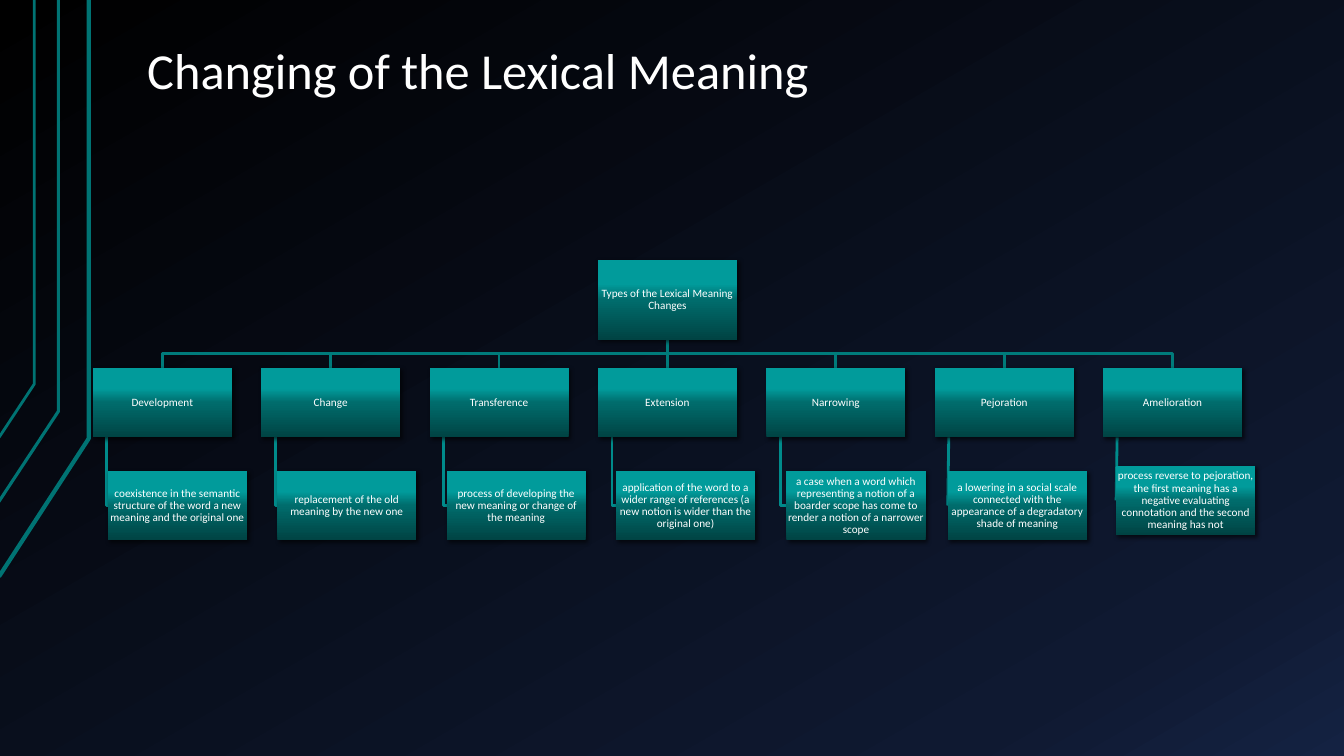
from lxml.etree import SubElement
from pptx import Presentation
from pptx.dml.color import RGBColor
from pptx.enum.shapes import MSO_CONNECTOR, MSO_SHAPE
from pptx.enum.text import MSO_ANCHOR, MSO_AUTO_SIZE, PP_ALIGN
from pptx.oxml.ns import qn
from pptx.util import Inches, Pt

WHITE = RGBColor(0xFF, 0xFF, 0xFF)
BLACK = RGBColor(0x00, 0x00, 0x00)
RAIL = RGBColor(0x00, 0x73, 0x73)
TRUNK = RGBColor(0x00, 0x7B, 0x7B)
BRANCH = RGBColor(0x00, 0x8B, 0x8B)

BACKDROP = [(0, BLACK), (85, RGBColor(0x0F, 0x19, 0x31)),
            (100, RGBColor(0x14, 0x22, 0x42))]
TEAL = [(0, RGBColor(0x00, 0x43, 0x43)), (50, RGBColor(0x00, 0x6C, 0x6C)),
        (70, RGBColor(0x01, 0x9B, 0x9B)), (100, RGBColor(0x00, 0x99, 0x99))]

# Outline of each decorative rail and its width in points
RAILS = [
    ([(-0.01, 5.72), (0.88, 4.35), (0.88, 0)], 3),
    ([(-0.02, 4.99), (0.58, 4.08), (0.58, 0)], 2.25),
    ([(-0.01, 4.34), (0.34, 3.81), (0.34, 0)], 2),
]

# Type of change, its explanation, left and top of the explanation
CHANGES = [
    ("Development", "coexistence in the semantic structure of the word a new "
     "meaning and the original one", 1.07, 4.67),
    ("Change", "replacement of the old meaning by the new one", 2.75, 4.67),
    ("Transference", "process of developing the new meaning or change of the "
     "meaning", 4.43, 4.67),
    ("Extension", "application of the word to a wider range of references "
     "(a new notion is wider than the original one)", 6.11, 4.67),
    ("Narrowing", "a case when a word which representing a notion of a boarder "
     "scope has come to render a notion of a narrower scope", 7.8, 4.67),
    ("Pejoration", "a lowering in a social scale connected with the "
     "appearance of a degradatory shade of meaning", 9.4, 4.67),
    ("Amelioration", "process reverse to pejoration, the first meaning has a "
     "negative evaluating connotation and the second meaning has not",
     11.07, 4.62),
]

BOX_W, BOX_H = 1.38, 0.69
ROOT_LEFT, ROOT_TOP, ROOT_H = 5.93, 2.58, 0.79
TYPE_LEFT, TYPE_TOP, TYPE_STEP = 0.92, 3.65, 1.67
BUS_Y = 3.51
STEM_INSET = 0.14


def set_gradient(fill, element, stops, angle):
    fill.gradient()
    fill.gradient_angle = angle
    stop_list = next(element.iter(qn("a:gsLst")))
    for old_stop in list(stop_list):
        stop_list.remove(old_stop)
    for position, color in stops:
        stop = SubElement(stop_list, qn("a:gs"), pos=str(position * 1000))
        SubElement(stop, qn("a:srgbClr"), val=str(color))


def set_text(shape, text, size, inset_x, inset_y, anchor=MSO_ANCHOR.MIDDLE,
             align=PP_ALIGN.CENTER):
    frame = shape.text_frame
    frame.word_wrap = True
    frame.auto_size = MSO_AUTO_SIZE.NONE
    frame.vertical_anchor = anchor
    frame.margin_left = frame.margin_right = Inches(inset_x)
    frame.margin_top = frame.margin_bottom = Inches(inset_y)
    paragraph = frame.paragraphs[0]
    paragraph.alignment = align
    paragraph.line_spacing = 0.9
    run = paragraph.add_run()
    run.text = text
    run.font.size = Pt(size)
    run.font.name = "Calibri"
    run.font.color.rgb = WHITE


def add_path(slide, points, color, width):
    points = [(Inches(x), Inches(y)) for x, y in points]
    if len(points) == 2:
        path_line = slide.shapes.add_connector(
            MSO_CONNECTOR.STRAIGHT, *points[0], *points[1])
        SubElement(path_line.element.spPr, qn("a:effectLst"))
    else:
        builder = slide.shapes.build_freeform(*points[0])
        builder.add_line_segments(points[1:], close=False)
        path_line = builder.convert_to_shape()
        path_line.fill.background()
        path_line.shadow.inherit = False
    path_line.line.color.rgb = color
    path_line.line.width = Pt(width)


def add_box(slide, text, left, top, height=BOX_H):
    box = slide.shapes.add_shape(MSO_SHAPE.RECTANGLE, Inches(left), Inches(top),
                                 Inches(BOX_W), Inches(height))
    set_gradient(box.fill, box.element, TEAL, 90)
    box.line.fill.background()
    # Soft shadow to the lower right
    box.shadow.inherit = False
    effects = box.element.spPr.find(qn("a:effectLst"))
    shadow = SubElement(effects, qn("a:outerShdw"), blurRad=str(Pt(3)),
                        dist=str(Pt(2)), dir=str(45 * 60000), rotWithShape="0")
    shade = SubElement(shadow, qn("a:srgbClr"), val=str(BLACK))
    SubElement(shade, qn("a:alpha"), val="60000")
    set_text(box, text, 8, 0.01, 0.01)


def add_trunk(slide, column):
    root_x = ROOT_LEFT + BOX_W / 2
    type_x = TYPE_LEFT + column * TYPE_STEP + BOX_W / 2
    start, end = (root_x, ROOT_TOP + ROOT_H), (type_x, TYPE_TOP)
    bend = [(root_x, BUS_Y), (type_x, BUS_Y)]
    straight = abs(root_x - type_x) < 0.01
    add_path(slide, [start, end] if straight else [start, *bend, end], TRUNK, 2)


def add_branch(slide, column, detail_left, detail_top):
    stem_x = TYPE_LEFT + column * TYPE_STEP + STEM_INSET
    start = (stem_x, TYPE_TOP + BOX_H)
    end = (detail_left, detail_top + BOX_H / 2)
    corner = [(stem_x, end[1])] if detail_left > stem_x else []
    add_path(slide, [start, *corner, end], BRANCH, 2)


def main():
    prs = Presentation()
    prs.slide_width, prs.slide_height = Inches(13.33), Inches(7.5)
    slide = prs.slides.add_slide(prs.slide_layouts[5])
    set_gradient(slide.background.fill, slide.element, BACKDROP, 300)

    # Rails at the left edge
    for points, width in RAILS:
        add_path(slide, points, RAIL, width)

    # Title
    title = slide.shapes.title
    title.left, title.top = Inches(1.33), Inches(0.3)
    title.width, title.height = Inches(11.33), Inches(0.77)
    set_text(title, "Changing of the Lexical Meaning", 36, 0.13, 0.07,
             anchor=MSO_ANCHOR.BOTTOM, align=PP_ALIGN.LEFT)

    # Lines of the tree, behind its boxes
    for column, (_, _, detail_left, detail_top) in enumerate(CHANGES):
        add_branch(slide, column, detail_left, detail_top)
        add_trunk(slide, column)

    # Boxes of the tree
    add_box(slide, "Types of the Lexical Meaning Changes", ROOT_LEFT, ROOT_TOP,
            ROOT_H)
    for column, (change, detail, left, top) in enumerate(CHANGES):
        add_box(slide, change, TYPE_LEFT + column * TYPE_STEP, TYPE_TOP)
        add_box(slide, detail, left, top)

    prs.save("out.pptx")


if __name__ == "__main__":
    main()
